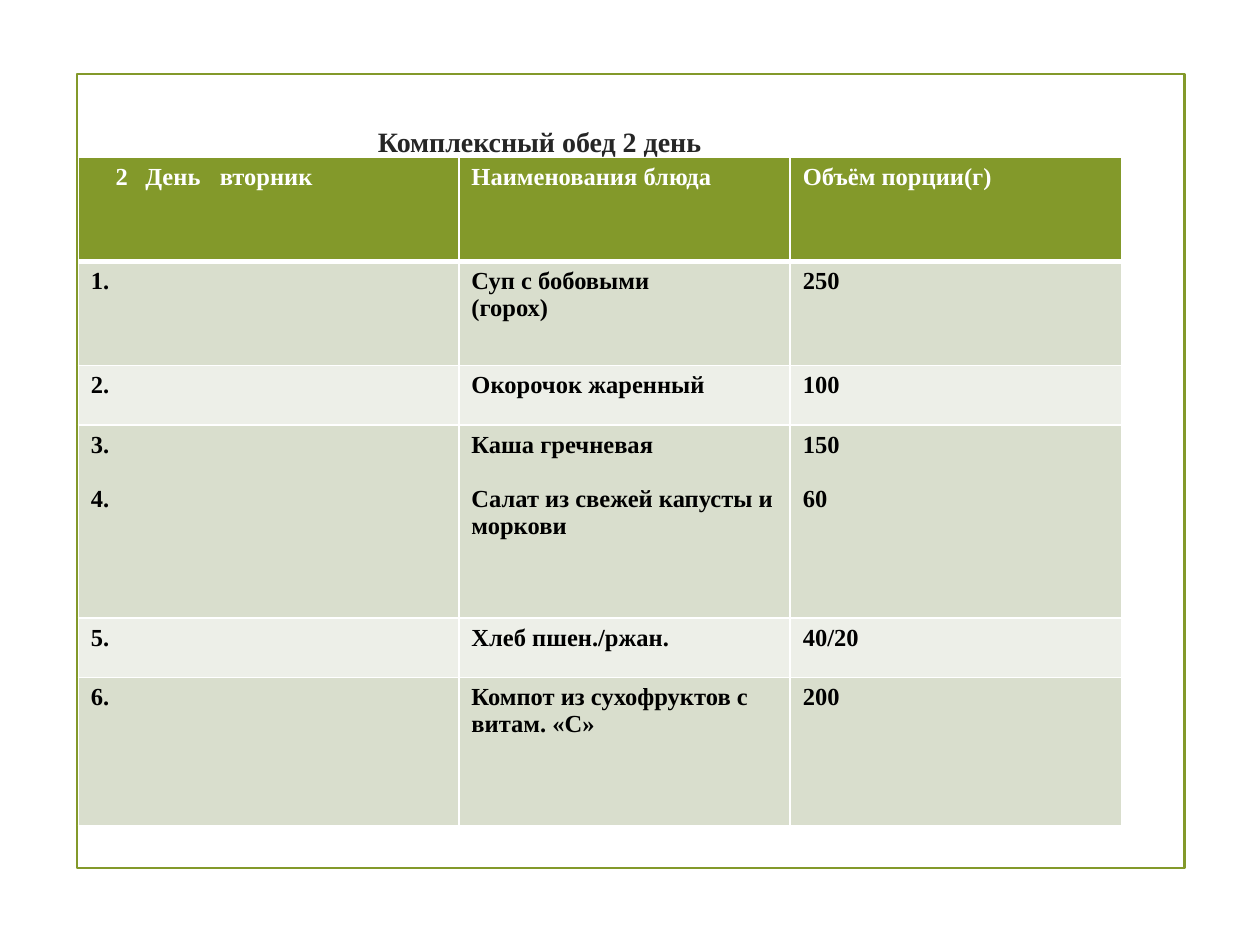
"""Build the slide with the lunch menu for the second day."""
from pptx import Presentation
from pptx import util as u
from pptx.dml.color import RGBColor
from pptx.enum import shapes, text
from pptx.oxml import parse_xml
from pptx.oxml.ns import nsdecls

GREEN = RGBColor(0x83, 0x99, 0x2A)
SAGE = RGBColor(0xD9, 0xDE, 0xCD)
PALE = RGBColor(0xED, 0xEF, 0xE8)
WHITE = RGBColor(0xFF, 0xFF, 0xFF)
BLACK = RGBColor(0, 0, 0)
CHARCOAL = RGBColor(0x26, 0x26, 0x26)

COLUMN_WIDTHS = (7.67, 6.68, 6.68)
ROW_HEIGHTS = (2.1, 2.1, 1.2, 3.89, 1.2, 2.99)
MENU = [
    (["2\tДень\tвторник"], ["Наименования блюда"], ["Объём порции(г)"]),
    (["1."], ["Суп с бобовыми", "(горох)"], ["250"]),
    (["2."], ["Окорочок жаренный"], ["100"]),
    (["3.", "4."], ["Каша гречневая", "Салат из свежей капусты и моркови"], ["150", "60"]),
    (["5."], ["Хлеб пшен./ржан."], ["40/20"]),
    (["6."], ["Компот из сухофруктов с витам. «С»"], ["200"]),
]
HEADER_ROW, DOUBLE_ROW = 0, 3


def apply_format(target, values):
    for name, value in values.items():
        setattr(target, name, value)


def write_paragraph(paragraph, words, size, color):
    paragraph.text = words
    apply_format(paragraph.font, {"name": "Times New Roman", "size": u.Pt(size), "bold": True})
    paragraph.font.color.rgb = color


def add_frame(slide):
    frame = slide.shapes.add_shape(
        shapes.MSO_SHAPE.RECTANGLE, u.Cm(1.55), u.Cm(1.5), u.Cm(22.33), u.Cm(16))
    frame.shadow.inherit = False
    frame.fill.background()
    frame.line.color.rgb = GREEN
    frame.line.width = u.Pt(1.25)


def add_title(slide, words):
    box = slide.shapes.add_textbox(u.Cm(3.58), u.Cm(2.39), u.Cm(18.9), u.Cm(14.1))
    apply_format(box.text_frame, {
        "word_wrap": True, "vertical_anchor": text.MSO_ANCHOR.TOP, "margin_left": u.Cm(4.04)})
    write_paragraph(box.text_frame.paragraphs[0], words, 16, CHARCOAL)


def add_borders(cell, bottom, top):
    properties = cell._tc.get_or_add_tcPr()
    for side, points in (("L", 1), ("R", 1), ("T", top), ("B", bottom)):
        properties.append(parse_xml(
            f'<a:ln{side} {nsdecls("a")} w="{u.Pt(points)}"><a:solidFill>'
            f'<a:srgbClr val="{WHITE}"/></a:solidFill></a:ln{side}>'))


def add_tab_stops(paragraph, positions):
    stops = "".join(f'<a:tab pos="{u.Cm(position)}" algn="l"/>' for position in positions)
    paragraph._p.get_or_add_pPr().append(
        parse_xml(f'<a:tabLst {nsdecls("a")}>{stops}</a:tabLst>'))


def fill_cell(cell, lines, fill, color, gap):
    cell.fill.solid()
    cell.fill.fore_color.rgb = fill
    frame = cell.text_frame
    for index, words in enumerate(lines):
        paragraph = frame.add_paragraph() if index else frame.paragraphs[0]
        if "\t" in words:
            cell.margin_left = u.Cm(0.75)
            add_tab_stops(paragraph, (0.6, 2.1))
        write_paragraph(paragraph, words, 14, color)
        if index and gap:
            paragraph.space_before = u.Pt(gap)


def add_menu(slide):
    table = slide.shapes.add_table(
        len(MENU), len(COLUMN_WIDTHS), u.Cm(1.58), u.Cm(3.17),
        u.Cm(sum(COLUMN_WIDTHS)), u.Cm(sum(ROW_HEIGHTS))).table
    for column, width in zip(table.columns, COLUMN_WIDTHS):
        column.width = u.Cm(width)
    for row_index, (row, height) in enumerate(zip(table.rows, ROW_HEIGHTS)):
        row.height = u.Cm(height)
        header = row_index == HEADER_ROW
        fill = GREEN if header else SAGE if row_index % 2 else PALE
        for cell, lines in zip(row.cells, MENU[row_index]):
            add_borders(cell, bottom=3 if header else 1, top=3 if row_index == 1 else 1)
            fill_cell(cell, lines, fill, WHITE if header else BLACK,
                      15.5 if row_index == DOUBLE_ROW else 0)


def main():
    presentation = Presentation()
    apply_format(presentation, {"slide_width": u.Cm(25.4), "slide_height": u.Cm(19.05)})
    slide = presentation.slides.add_slide(presentation.slide_layouts[6])
    add_frame(slide)
    add_title(slide, "Комплексный обед 2 день")
    add_menu(slide)
    presentation.save("out.pptx")


if __name__ == "__main__":
    main()
